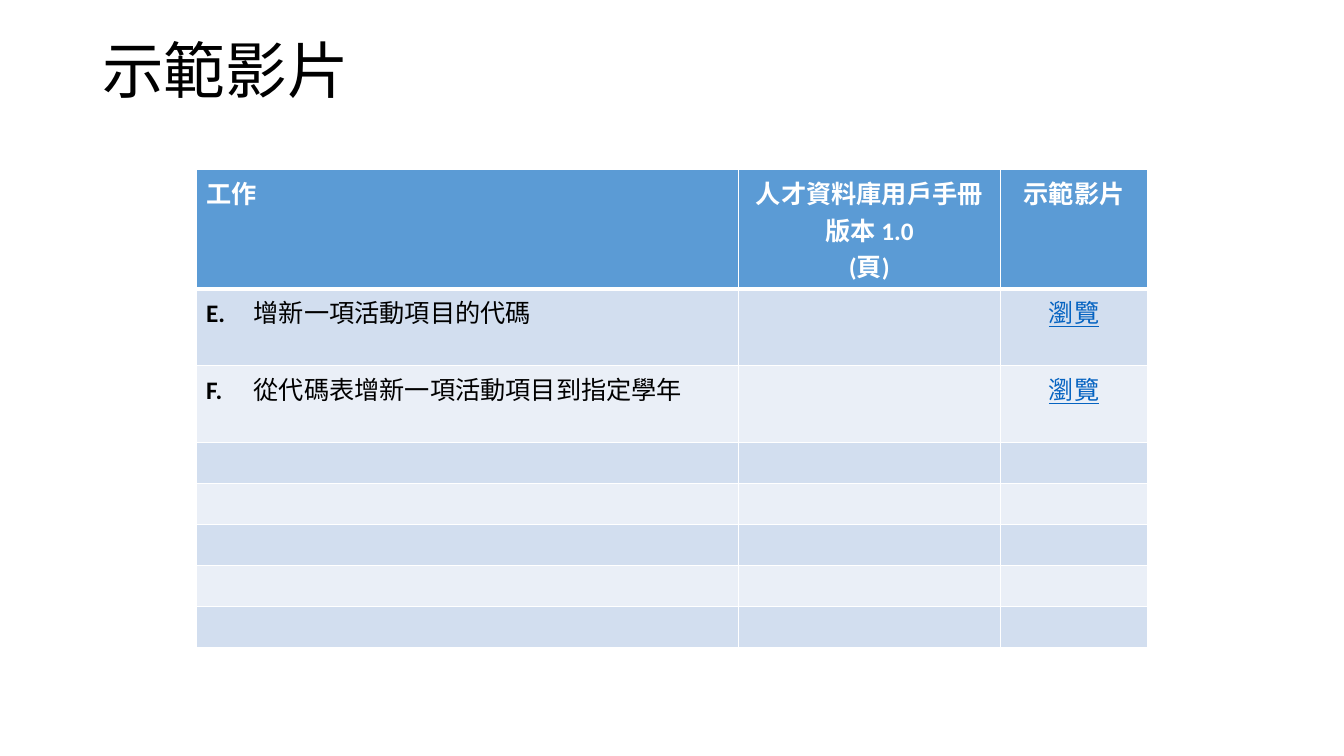
import pptx
import pptx.dml.color
import pptx.enum.text
import pptx.oxml
import pptx.oxml.ns
import pptx.util

Pt = pptx.util.Pt
ALIGN = pptx.enum.text.PP_ALIGN
FONT = "Calibri"
BLACK, WHITE, LINK_BLUE = "000000", "FFFFFF", "0563C1"
HEADER_FILL = "5B9BD5"
BAND_FILLS = ["D2DEEF", "EAEFF7"]
COLUMN_WIDTHS = [387.4, 187.2, 105.3]
ROW_HEIGHTS = [85, 55, 55] + [29.3] * 5
HEADERS = [["工作"], ["人才資料庫用戶手冊 版本 1.0", "(頁)"], ["示範影片"]]
TASKS = [
    ("E.", "增新一項活動項目的代碼"),
    ("F.", "從代碼表增新一項活動項目到指定學年"),
]


def color(hex_string):
    return pptx.dml.color.RGBColor.from_string(hex_string)


def add_run(paragraph, text, size, hex_string, bold=False, underline=False):
    run = paragraph.add_run()
    run.text = text
    run.font.name = FONT
    run.font.size = Pt(size)
    run.font.bold = bold
    run.font.underline = underline
    run.font.color.rgb = color(hex_string)


def add_title(slide, left, top, width, height):
    frame = slide.shapes.add_textbox(Pt(left), Pt(top), Pt(width), Pt(height)).text_frame
    frame.word_wrap = True
    frame.vertical_anchor = pptx.enum.text.MSO_ANCHOR.TOP
    frame.margin_top = 0
    paragraph = frame.paragraphs[0]
    paragraph.line_spacing = 0.9
    add_run(paragraph, "示範影片", 44, BLACK)


def style_cell(cell, row):
    properties = cell._tc.get_or_add_tcPr()
    widths = {"L": 1, "R": 1, "T": 3 if row == 1 else 1, "B": 3 if row == 0 else 1}
    for side, width in widths.items():
        properties.append(pptx.oxml.parse_xml(
            f'<a:ln{side} {pptx.oxml.ns.nsdecls("a")} w="{Pt(width)}">'
            f'<a:solidFill><a:srgbClr val="{WHITE}"/></a:solidFill></a:ln{side}>'))
    cell.fill.solid()
    cell.fill.fore_color.rgb = color(HEADER_FILL if row == 0 else BAND_FILLS[(row - 1) % 2])


def fill_header(table):
    for column, lines in enumerate(HEADERS):
        frame = table.cell(0, column).text_frame
        for index, line in enumerate(lines):
            paragraph = frame.add_paragraph() if index else frame.paragraphs[0]
            paragraph.alignment = ALIGN.CENTER if column else ALIGN.LEFT
            add_run(paragraph, line, 18, WHITE, bold=True)


def fill_task(table, row, letter, task):
    paragraph = table.cell(row, 0).text_frame.paragraphs[0]
    paragraph._p.get_or_add_pPr().append(pptx.oxml.parse_xml(
        f'<a:tabLst {pptx.oxml.ns.nsdecls("a")}><a:tab pos="{Pt(34)}" algn="l"/></a:tabLst>'))
    add_run(paragraph, letter + "\t", 18, BLACK, bold=True)
    add_run(paragraph, task, 18, BLACK)
    paragraph = table.cell(row, 2).text_frame.paragraphs[0]
    paragraph.alignment = ALIGN.CENTER
    add_run(paragraph, "瀏覽", 18, LINK_BLUE, underline=True)


def add_task_table(slide, left, top):
    table = slide.shapes.add_table(
        len(ROW_HEIGHTS), len(COLUMN_WIDTHS), Pt(left), Pt(top),
        Pt(sum(COLUMN_WIDTHS)), Pt(sum(ROW_HEIGHTS))).table
    for column, width in zip(table.columns, COLUMN_WIDTHS):
        column.width = Pt(width)
    for row, height in enumerate(ROW_HEIGHTS):
        table.rows[row].height = Pt(height)
        for cell in table.rows[row].cells:
            style_cell(cell, row)
    fill_header(table)
    for row, (letter, task) in enumerate(TASKS, start=1):
        fill_task(table, row, letter, task)


def main():
    presentation = pptx.Presentation()
    presentation.slide_width = Pt(960)
    presentation.slide_height = Pt(540)
    slide = presentation.slides.add_slide(presentation.slide_layouts[6])
    add_title(slide, 66, 28.8, 828, 104.4)
    add_task_table(slide, 140, 121.2)
    presentation.save("out.pptx")


if __name__ == "__main__":
    main()
